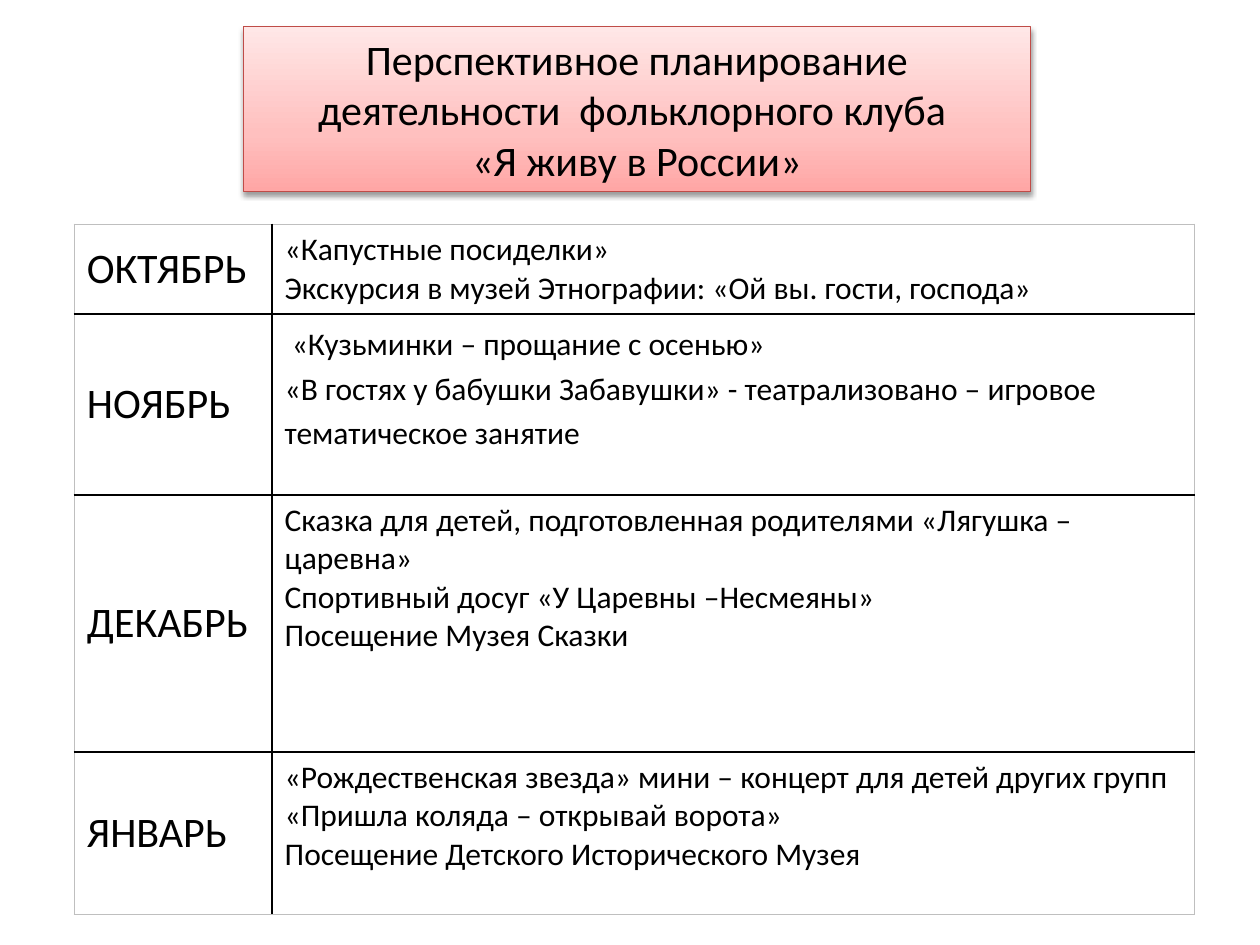
from dataclasses import dataclass

from lxml.etree import SubElement
from pptx import Presentation
from pptx.dml.color import RGBColor
from pptx.enum.text import MSO_ANCHOR as Anchor, MSO_AUTO_SIZE as AutoSize, PP_ALIGN as Align
from pptx.oxml import parse_xml
from pptx.oxml.ns import nsdecls, qn
from pptx.util import Inches, Pt

COLORS = {
    "text": "000000",
    "grid": "000000",
    "frame": "BFBFBF",
    "title_line": "BF4C48",
    "shadow": "000000",
    "gradient_bottom": "FFA6A5",
    "gradient_middle": "FFC0BF",
    "gradient_top": "FFE7E7",
}
GRADIENT_STOPS = {"gradient_bottom": 0, "gradient_middle": 35, "gradient_top": 100}
TITLE_LINES = [
    "Перспективное планирование деятельности  фольклорного клуба ",
    "«Я живу в России»",
]
COLUMN_WIDTHS = [1.57, 7.32]


@dataclass
class Month:
    name: str
    height: float
    events: list[str]
    line_spacing: float = 1.0


MONTHS = [
    Month("ОКТЯБРЬ", 0.7, [
        "«Капустные посиделки»",
        "Экскурсия в музей Этнографии: «Ой вы. гости, господа»",
    ]),
    Month("НОЯБРЬ", 1.44, [
        " «Кузьминки – прощание с осенью»",
        "«В гостях у бабушки Забавушки» - театрализовано – игровое тематическое занятие",
    ], 1.15),
    Month("ДЕКАБРЬ", 2.04, [
        "Сказка для детей, подготовленная родителями «Лягушка – царевна»",
        "Спортивный досуг «У Царевны –Несмеяны»",
        "Посещение Музея Сказки",
    ]),
    Month("ЯНВАРЬ", 1.29, [
        "«Рождественская звезда» мини – концерт для детей других групп",
        "«Пришла коляда – открывай ворота»",
        "Посещение Детского Исторического Музея",
    ]),
]


def write_lines(text_frame, lines: list[str], size: int, **paragraph_format) -> None:
    text_frame.text = "\n".join(lines)
    for paragraph in text_frame.paragraphs:
        for name, value in paragraph_format.items():
            setattr(paragraph, name, value)
        for run in paragraph.runs:
            for name, value in {"name": "Calibri", "size": Pt(size), "bold": False}.items():
                setattr(run.font, name, value)
            run.font.color.rgb = RGBColor.from_string(COLORS["text"])


def fill_title_gradient(shape) -> None:
    shape.fill.gradient()
    shape.fill.gradient_angle = 90
    stop_list = next(shape.element.iter(qn("a:gsLst")))
    for stop in list(stop_list):
        stop_list.remove(stop)
    for color, position in GRADIENT_STOPS.items():
        stop = SubElement(stop_list, qn("a:gs"), pos=str(position * 1000))
        SubElement(stop, qn("a:srgbClr"), val=COLORS[color])


def add_title_shadow(shape) -> None:
    shape.element.spPr.append(parse_xml(
        f'<a:effectLst {nsdecls("a")}>'
        f'<a:outerShdw blurRad="{Pt(3.1)}" dist="{Pt(1.6)}" dir="5400000" rotWithShape="0">'
        f'<a:srgbClr val="{COLORS["shadow"]}"><a:alpha val="38000"/></a:srgbClr>'
        '</a:outerShdw></a:effectLst>'
    ))


def format_title(title) -> None:
    box = {"left": 1.93, "top": 0.21, "width": 6.25, "height": 1.31}
    for name, value in box.items():
        setattr(title, name, Inches(value))
    fill_title_gradient(title)
    title.line.color.rgb = RGBColor.from_string(COLORS["title_line"])
    title.line.width = Pt(0.75)
    add_title_shadow(title)
    frame_format = {
        "word_wrap": True,
        "auto_size": AutoSize.NONE,
        "vertical_anchor": Anchor.MIDDLE,
    }
    for name, value in frame_format.items():
        setattr(title.text_frame, name, value)
    write_lines(title.text_frame, TITLE_LINES, 24, alignment=Align.CENTER)


def set_borders(cell, outer_sides: dict[str, bool]) -> None:
    properties = cell._tc.get_or_add_tcPr()
    for index, (side, outer) in enumerate(outer_sides.items()):
        color = COLORS["frame" if outer else "grid"]
        properties.insert(index, parse_xml(
            f'<a:{side} {nsdecls("a")} w="{Pt(1)}"><a:solidFill>'
            f'<a:srgbClr val="{color}"/></a:solidFill></a:{side}>'
        ))


def add_plan_table(slide, months: list[Month]) -> None:
    total_height = sum(month.height for month in months)
    table = slide.shapes.add_table(
        len(months), len(COLUMN_WIDTHS), Inches(0.59), Inches(1.78),
        Inches(sum(COLUMN_WIDTHS)), Inches(total_height),
    ).table
    table.first_row = table.horz_banding = False
    for column, width in zip(table.columns, COLUMN_WIDTHS):
        column.width = Inches(width)
    for row_index, month in enumerate(months):
        row = table.rows[row_index]
        row.height = Inches(month.height)
        name_cell, events_cell = row.cells
        name_cell.vertical_anchor = Anchor.MIDDLE
        write_lines(name_cell.text_frame, [month.name], 24)
        write_lines(events_cell.text_frame, month.events, 18, line_spacing=month.line_spacing)
        for cell in (name_cell, events_cell):
            cell.fill.background()
            set_borders(cell, {
                "lnL": cell is name_cell,
                "lnR": cell is events_cell,
                "lnT": row_index == 0,
                "lnB": row_index == len(months) - 1,
            })


def main() -> None:
    presentation = Presentation()
    presentation.slide_width = Inches(10)
    presentation.slide_height = Inches(7.5)
    slide = presentation.slides.add_slide(presentation.slide_layouts[5])
    format_title(slide.shapes.title)
    add_plan_table(slide, MONTHS)
    presentation.save("out.pptx")


if __name__ == "__main__":
    main()
